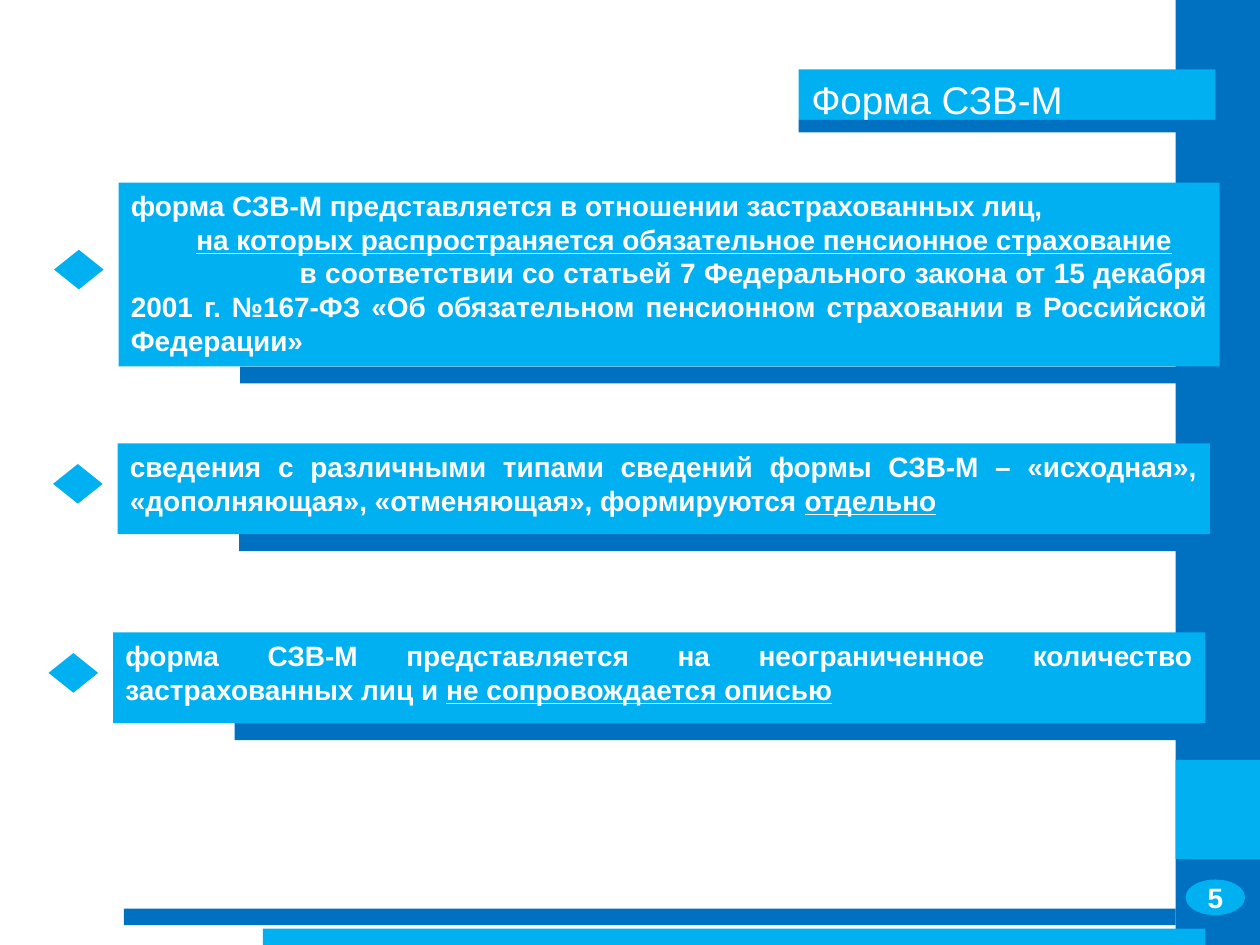
from pptx import Presentation
from pptx.dml.color import RGBColor
from pptx.enum import shapes, text
from pptx.util import Cm, Pt

DARK = RGBColor(0x00, 0x70, 0xC0)
LIGHT = RGBColor(0x00, 0xB0, 0xF0)
WHITE = RGBColor(0xFF, 0xFF, 0xFF)
RECT = shapes.MSO_SHAPE.RECTANGLE

prs = Presentation()
prs.slide_width, prs.slide_height = Cm(25.4), Cm(19.05)
slide = prs.slides.add_slide(prs.slide_layouts[5])


def add_figure(kind, color, left, top, width, height):
    figure = slide.shapes.add_shape(kind, Cm(left), Cm(top), Cm(width), Cm(height))
    figure.shadow.inherit = False
    figure.fill.solid()
    figure.fill.fore_color.rgb = color
    figure.line.fill.background()
    return figure


def format_run(run, size, bold=False, underline=False):
    run.font.name = "Arial"
    run.font.size = Pt(size)
    run.font.color.rgb = WHITE
    run.font.bold = bold
    run.font.underline = underline


# Side band and footer bars
add_figure(RECT, DARK, 23.7, 0, 1.7, 19.05)
add_figure(RECT, LIGHT, 23.7, 15.32, 1.7, 2)
add_figure(RECT, DARK, 2.5, 18.32, 21.2, 0.33)
add_figure(RECT, LIGHT, 5.3, 18.72, 19, 0.33)

# Page number
page_number = add_figure(shapes.MSO_SHAPE.OVAL, LIGHT, 23.9, 17.73, 1.2, 0.72)
page_number.text_frame.text = "5"
page_number.text_frame.paragraphs[0].alignment = text.PP_ALIGN.CENTER
format_run(page_number.text_frame.paragraphs[0].runs[0], 16, bold=True)

# Title, brought in front of the side band
title = slide.shapes.title
title.left, title.top, title.width, title.height = Cm(16.1), Cm(1.4), Cm(8.4), Cm(1.02)
title.fill.solid()
title.fill.fore_color.rgb = LIGHT
title.text_frame.text = "Форма СЗВ-М"
title.text_frame.auto_size = text.MSO_AUTO_SIZE.NONE
title.text_frame.vertical_anchor = text.MSO_ANCHOR.TOP
title.text_frame.paragraphs[0].alignment = text.PP_ALIGN.LEFT
format_run(title.text_frame.paragraphs[0].runs[0], 22)
title.element.getparent().append(title.element)
add_figure(RECT, DARK, 16.1, 2.42, 8.4, 0.25)

# Statements: left, top, width, height, then paragraphs of
# (first-line indent, alignment, [(words, underlined), ...])
LEFT, JUSTIFY = text.PP_ALIGN.LEFT, text.PP_ALIGN.JUSTIFY
statements = [
    (2.39, 3.68, 22.2, 3.71, [
        (0, LEFT, [("форма СЗВ-М представляется в отношении застрахованных лиц,", False)]),
        (1.32, LEFT, [("на которых распространяется обязательное пенсионное страхование", True)]),
        (3.4, JUSTIFY, [("в соответствии со статьей 7 Федерального закона от 15 декабря 2001 г. "
                         "№167-ФЗ «Об обязательном пенсионном страховании в Российской "
                         "Федерации»", False)]),
    ]),
    (2.37, 8.94, 22.02, 1.83, [
        (0, JUSTIFY, [("сведения с различными типами сведений формы СЗВ-М – «исходная», "
                       "«дополняющая», «отменяющая», формируются ", False),
                      ("отдельно", True)]),
    ]),
    (2.28, 12.75, 22.02, 1.83, [
        (0, JUSTIFY, [("форма СЗВ-М представляется на неограниченное количество "
                       "застрахованных лиц и ", False),
                      ("не сопровождается описью", True)]),
    ]),
]
STRIP_INSET = 2.45

for left, top, width, height, paragraphs in statements:
    add_figure(RECT, DARK, left + STRIP_INSET, top + height, width - STRIP_INSET, 0.34)
    statement = add_figure(RECT, LIGHT, left, top, width, height)
    add_figure(shapes.MSO_SHAPE.DIAMOND, LIGHT, left - 1.3, top + height / 2 - 0.5, 1, 0.8)

    frame = statement.text_frame
    frame.word_wrap = True
    frame.vertical_anchor = text.MSO_ANCHOR.TOP
    for number, (indent, alignment, pieces) in enumerate(paragraphs):
        paragraph = frame.add_paragraph() if number else frame.paragraphs[0]
        paragraph.alignment = alignment
        paragraph._p.get_or_add_pPr().set("indent", str(Cm(indent)))
        for words, underlined in pieces:
            run = paragraph.add_run()
            run.text = words
            format_run(run, 16, bold=True, underline=underlined)

prs.save("out.pptx")
